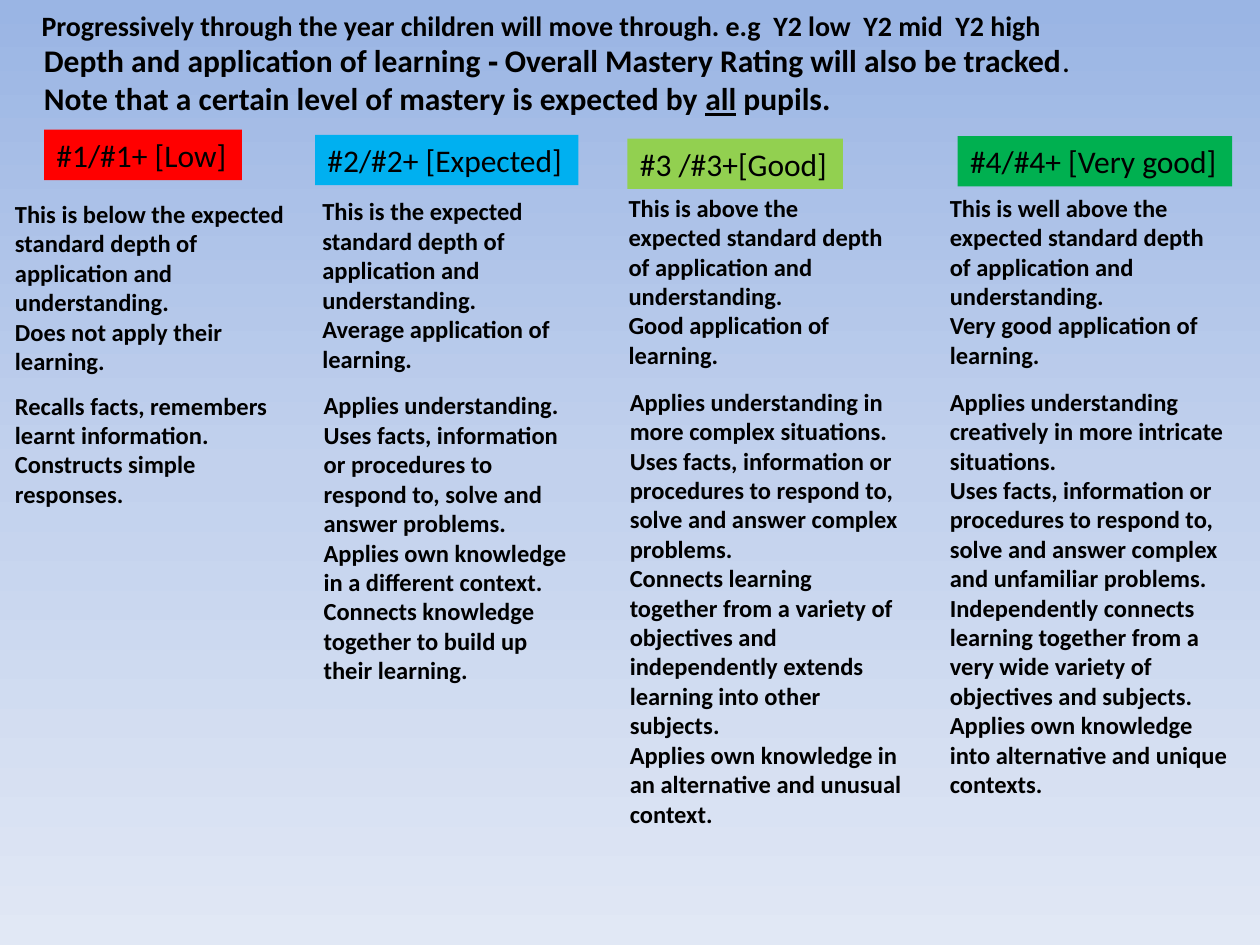
from copy import deepcopy
from dataclasses import dataclass

from lxml import etree
from pptx import Presentation
from pptx.dml.color import RGBColor
from pptx.enum import shapes, text
from pptx.oxml import ns
from pptx.util import Inches, Pt

BLACK = RGBColor(0x00, 0x00, 0x00)
RED = RGBColor(0xFF, 0x00, 0x00)
BLUE = RGBColor(0x00, 0xB0, 0xF0)
LIME = RGBColor(0x92, 0xD0, 0x50)
GREEN = RGBColor(0x00, 0xB0, 0x50)
BACKGROUND_STOPS = [
    (0, RGBColor(0x9A, 0xB5, 0xE4)),
    (0.5, RGBColor(0xC2, 0xD1, 0xED)),
    (1, RGBColor(0xE1, 0xE8, 0xF5)),
]
LABEL_HEIGHT = 0.4
STANDARD_HEIGHT = 1.51
BOLD = {"bold": True}
PLAIN = {"bold": False}
UNDERLINED = {"bold": True, "underline": True}


@dataclass
class Box:
    left: float
    top: float
    width: float
    height: float

    def lengths(self) -> list:
        return [Inches(n) for n in (self.left, self.top, self.width, self.height)]


@dataclass
class Rating:
    label: str
    color: RGBColor
    label_box: Box
    standard_box: Box
    standard: list[str]
    skills_box: Box
    skills: list[str]


def standard(level: str, application: str) -> list[str]:
    return [
        f"This is {level} standard depth of application and understanding.",
        f"{application} their learning." if application.startswith("Does")
        else f"{application} application of learning.",
    ]


RATINGS = [
    Rating(
        "#1/#1+ [Low]", RED, Box(0.35, 1.03, 1.57, LABEL_HEIGHT),
        Box(0.02, 1.53, 2.45, STANDARD_HEIGHT),
        standard("below the expected", "Does not apply"),
        Box(0.02, 3.05, 2.26, 1.28),
        ["Recalls facts, remembers learnt information.",
         "Constructs simple responses."],
    ),
    Rating(
        "#2/#2+ [Expected]", BLUE, Box(2.5, 1.07, 2.09, LABEL_HEIGHT),
        Box(2.46, 1.51, 2.16, STANDARD_HEIGHT),
        standard("the expected", "Average"),
        Box(2.47, 3.05, 2.16, 3.16),
        ["Applies understanding.",
         "Uses facts, information or procedures to respond to, solve and answer problems.",
         "Applies own knowledge in a different context.",
         "Connects knowledge together to build up their learning."],
    ),
    Rating(
        "#3 /#3+[Good]", LIME, Box(4.98, 1.1, 1.71, LABEL_HEIGHT),
        Box(4.89, 1.48, 2.28, STANDARD_HEIGHT),
        standard("above the expected", "Good"),
        Box(4.9, 3.02, 2.36, 4.34),
        ["Applies understanding in more complex situations.",
         "Uses facts, information or procedures to respond to, solve and answer complex problems.",
         "Connects learning together from a variety of objectives and independently extends "
         "learning into other subjects.",
         "Applies own knowledge in an alternative and unusual context."],
    ),
    Rating(
        "#4/#4+ [Very good]", GREEN, Box(7.6, 1.08, 2.18, LABEL_HEIGHT),
        Box(7.44, 1.48, 2.4, STANDARD_HEIGHT),
        standard("well above the expected", "Very good"),
        Box(7.44, 3.02, 2.47, 3.64),
        ["Applies understanding creatively in more intricate situations.",
         "Uses facts, information or procedures to respond to, solve and answer complex "
         "and unfamiliar problems.",
         "Independently connects learning together from a very wide variety of objectives "
         "and subjects.",
         "Applies own knowledge into alternative and unique contexts."],
    ),
]


def paint_background(slide) -> None:
    fill = slide.background.fill
    fill.gradient()
    fill.gradient_angle = 270
    stop_list = next(slide.element.iter(ns.qn("a:gsLst")))
    stop_list.append(deepcopy(stop_list[-1]))
    for stop, (position, color) in zip(fill.gradient_stops, BACKGROUND_STOPS):
        stop.position = position
        stop.color.rgb = color


def write(shape, paragraphs: list, size: int, wrap: bool = True) -> None:
    frame = shape.text_frame
    settings = {
        "word_wrap": wrap,
        "auto_size": text.MSO_AUTO_SIZE.SHAPE_TO_FIT_TEXT,
        "vertical_anchor": text.MSO_ANCHOR.TOP,
    }
    for name, value in settings.items():
        setattr(frame, name, value)
    for index, pieces in enumerate(paragraphs):
        paragraph = frame.add_paragraph() if index else frame.paragraphs[0]
        paragraph.alignment = text.PP_ALIGN.LEFT
        for words, style in pieces:
            run = paragraph.add_run()
            run.text = words
            run.font.color.rgb = BLACK
            for name, value in {"name": "Calibri", "size": Pt(size), **style}.items():
                setattr(run.font, name, value)


def add_text(slide, box: Box, paragraphs: list, size: int) -> None:
    write(slide.shapes.add_textbox(*box.lengths()), paragraphs, size)


def add_rating(slide, rating: Rating) -> None:
    label = slide.shapes.add_shape(
        shapes.MSO_SHAPE.RECTANGLE, *rating.label_box.lengths()
    )
    label.shadow.inherit = False
    label.fill.solid()
    label.fill.fore_color.rgb = rating.color
    label.line.fill.background()
    write(label, [[(rating.label, PLAIN)]], 18, wrap=False)
    for box, lines in (
        (rating.standard_box, rating.standard),
        (rating.skills_box, rating.skills),
    ):
        add_text(slide, box, [[(line, BOLD)] for line in lines], 14)


def fill_introduction(slide) -> None:
    slide.shapes.title.element.getparent().remove(slide.shapes.title.element)
    body = slide.placeholders[1]
    body.left, body.top, body.width, body.height = Box(0.23, 0.02, 9.53, 1.26).lengths()
    introduction = (
        "Progressively through the year children will move through. "
        "e.g  Y2 low  Y2 mid  Y2 high"
    )
    write(body, [[(introduction, BOLD)]], 16)
    body.text_frame.auto_size = text.MSO_AUTO_SIZE.NONE
    properties = body.text_frame.paragraphs[0]._p.get_or_add_pPr()
    properties.set("marL", "0")
    properties.set("indent", "0")
    etree.SubElement(properties, ns.qn("a:buNone"))


def main() -> None:
    presentation = Presentation()
    presentation.slide_width = Inches(10)
    presentation.slide_height = Inches(7.5)
    slide = presentation.slides.add_slide(presentation.slide_layouts[1])
    paint_background(slide)
    fill_introduction(slide)
    add_text(slide, Box(0.25, 0.28, 9.37, 0.71), [
        [("Depth and application of learning ‐ Overall Mastery Rating will also be tracked", BOLD),
         (".", PLAIN)],
        [("Note that a certain level of mastery is expected by ", BOLD),
         ("all", UNDERLINED),
         (" pupils.", BOLD)],
    ], 18)
    for rating in RATINGS:
        add_rating(slide, rating)
    presentation.save("out.pptx")


if __name__ == "__main__":
    main()
